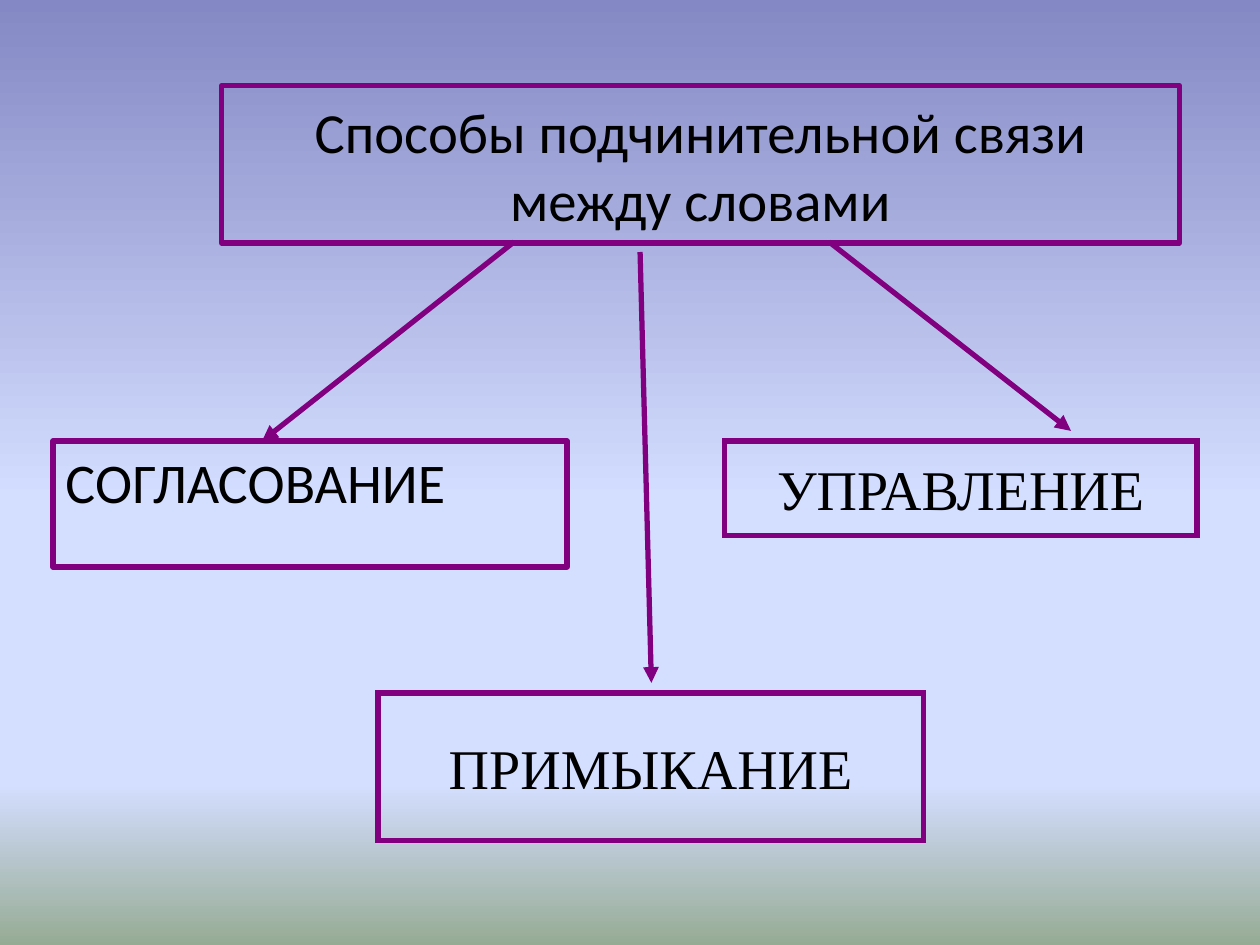
from lxml.etree import SubElement
from pptx import Presentation
from pptx.dml.color import RGBColor
from pptx.enum.shapes import MSO_CONNECTOR as Connector, MSO_SHAPE as Shape
from pptx.enum.text import MSO_ANCHOR as Anchor, PP_ALIGN as Align
from pptx.oxml.ns import qn
from pptx.util import Cm, Pt


def inches(value):
    return Cm(value * 2.54)


def color(value):
    return RGBColor.from_string(value)


class Diagram:
    accent = "800080"
    ink = "000000"
    weight = Pt(3)

    def __init__(self, page):
        self.page = page

    def background(self, stops):
        fill = self.page.background.fill
        fill.gradient()
        gradient = next(self.page.element.iter(qn("a:gradFill")))
        stop_list = gradient.find(qn("a:gsLst"))
        for stop in list(stop_list):
            stop_list.remove(stop)
        for position, value in stops:
            stop = SubElement(stop_list, qn("a:gs"), pos=str(position * 1000))
            SubElement(stop, qn("a:srgbClr"), val=value)
        gradient.find(qn("a:lin")).set("ang", "5400000")

    def outline(self, shape):
        shape.line.color.rgb = color(self.accent)
        shape.line.width = self.weight
        return shape.line.color and shape._element.spPr.find(qn("a:ln"))

    def box(self, text, left, top, width, height, font="Times New Roman",
            size=32, align=Align.CENTER, anchor=Anchor.MIDDLE, wrap=False,
            miter=True):
        box = self.page.shapes.add_shape(
            Shape.RECTANGLE, *map(inches, (left, top, width, height)))
        box.shadow.inherit = False
        box.fill.background()
        line = self.outline(box)
        if miter:
            SubElement(line, qn("a:miter"), lim="800000")
        frame = box.text_frame
        frame.text = text
        frame.word_wrap = wrap
        frame.vertical_anchor = anchor
        para = frame.paragraphs[0]
        para.alignment = align
        span = para.runs[0]
        span.font.name = font
        span.font.size = Pt(size)
        span.font.color.rgb = color(self.ink)
        return box

    def arrow(self, start, end):
        arrow = self.page.shapes.add_connector(
            Connector.STRAIGHT, *map(inches, start + end))
        line = self.outline(arrow)
        SubElement(line, qn("a:tailEnd"), type="triangle")
        SubElement(arrow._element.spPr, qn("a:effectLst"))


def main():
    deck = Presentation()
    deck.slide_width, deck.slide_height = inches(10), inches(7.5)
    diagram = Diagram(deck.slides.add_slide(deck.slide_layouts[6]))
    diagram.background([(0, "8488C4"), (53, "D4DEFF"),
                        (83, "D4DEFF"), (100, "96AB94")])

    diagram.box("Способы подчинительной связи между словами",
                1.76, 0.68, 7.6, 1.25, font="Calibri", size=32.4,
                wrap=True, miter=False)
    agreement = diagram.box("СОГЛАСОВАНИЕ", 0.42, 3.5, 4.08, 1,
                            font="Calibri", align=Align.LEFT,
                            anchor=Anchor.TOP, wrap=True, miter=False)
    agreement.text_frame.paragraphs[0].space_before = Pt(6.4)
    diagram.box("УПРАВЛЕНИЕ", 5.75, 3.5, 3.75, 0.75)
    diagram.box("ПРИМЫКАНИЕ", 3, 5.5, 4.33, 1.17)

    diagram.arrow((5.08, 2), (5.17, 5.42))
    diagram.arrow((4.08, 1.92), (2.08, 3.5))
    diagram.arrow((6.58, 1.92), (8.5, 3.42))
    deck.save("out.pptx")


if __name__ == "__main__":
    main()
